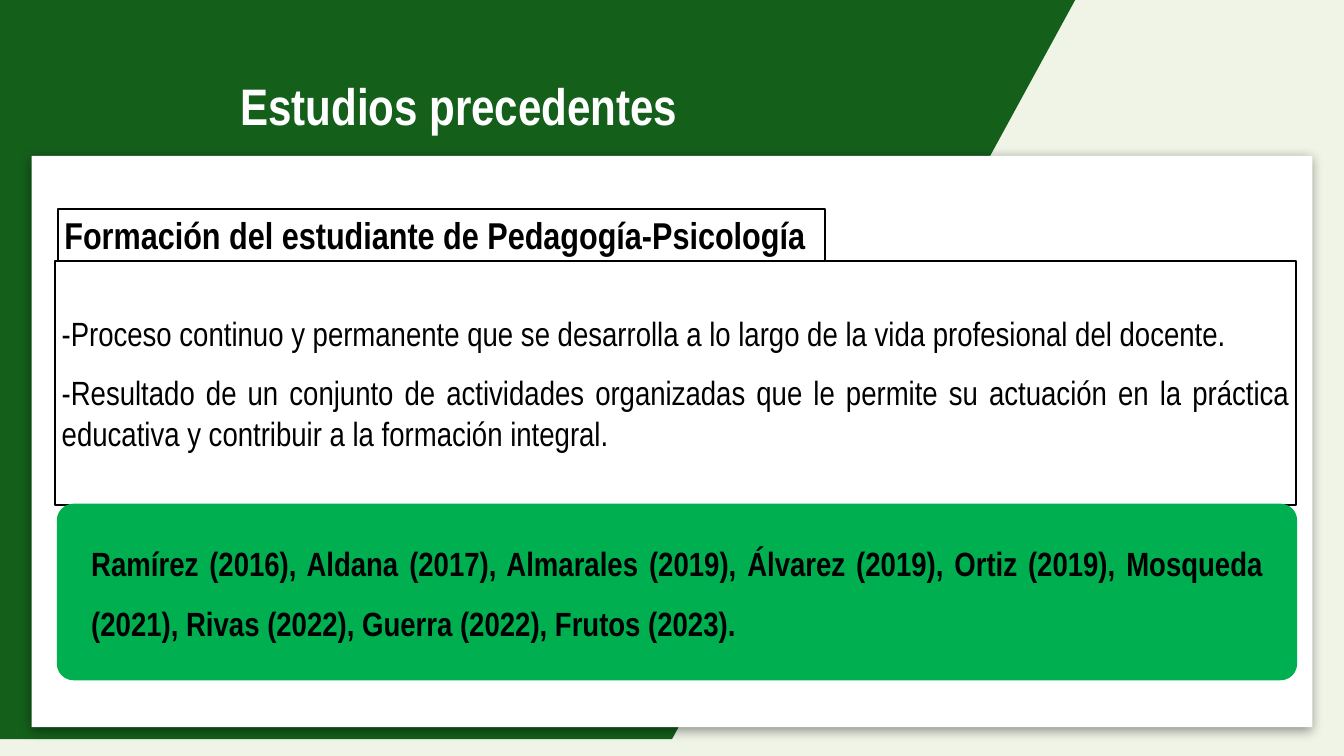
import pptx
import pptx.dml.color
import pptx.enum.shapes
import pptx.enum.text
import pptx.oxml
import pptx.oxml.ns
import pptx.util

RGBColor = pptx.dml.color.RGBColor
Inches = pptx.util.Inches
Pt = pptx.util.Pt
Shape = pptx.enum.shapes.MSO_SHAPE
Align = pptx.enum.text.PP_ALIGN
Anchor = pptx.enum.text.MSO_ANCHOR
AutoSize = pptx.enum.text.MSO_AUTO_SIZE

DARK_GREEN = RGBColor(0x14, 0x60, 0x1B)
GREEN = RGBColor(0x00, 0xB0, 0x50)
CREAM = RGBColor(0xF0, 0xF4, 0xE6)
WHITE = RGBColor(0xFF, 0xFF, 0xFF)
BLACK = RGBColor(0x00, 0x00, 0x00)

FONT = "Arial Narrow"
WIDTH, HEIGHT = 20, 11.25
LEFT, RIGHT = 0.86, 19.29
BODY_TOP, REFERENCES_TOP = 3.89, 7.51


def add_band(slide):
    """Dark green area with a slanted right edge."""
    corners = [(0, 0), (16.37, 0), (9.93, HEIGHT), (0, HEIGHT)]
    builder = slide.shapes.build_freeform(*corners[0], scale=Inches(1))
    builder.add_line_segments(corners[1:], close=True)
    band = builder.convert_to_shape()
    band.shadow.inherit = False
    band.fill.solid()
    band.fill.fore_color.rgb = DARK_GREEN
    band.line.fill.background()


def add_box(slide, box, fill, line=None, kind=Shape.RECTANGLE):
    shape = slide.shapes.add_shape(kind, *map(Inches, box))
    shape.shadow.inherit = False
    shape.fill.solid()
    shape.fill.fore_color.rgb = fill
    if line is None:
        shape.line.fill.background()
    else:
        shape.line.color.rgb = line
        shape.line.width = Pt(2)
    return shape


def add_soft_shadow(shape):
    effects = shape.element.spPr.find(pptx.oxml.ns.qn("a:effectLst"))
    effects.append(pptx.oxml.parse_xml(
        f'<a:outerShdw {pptx.oxml.ns.nsdecls("a")} blurRad="{Pt(12)}" dist="{Pt(3)}" '
        'dir="5400000" algn="t" rotWithShape="0">'
        '<a:srgbClr val="000000"><a:alpha val="40000"/></a:srgbClr></a:outerShdw>'))


def write(shape, texts, size, color=BLACK, bold=False, anchor=Anchor.TOP, **layout):
    frame = shape.text_frame
    frame.word_wrap = True
    frame.auto_size = AutoSize.NONE
    frame.vertical_anchor = anchor
    frame.text = "\n".join(texts)
    paragraph_format = {"alignment": Align.JUSTIFY, **layout}
    font_format = {"name": FONT, "size": Pt(size), "bold": bold}
    for paragraph in frame.paragraphs:
        for name, value in paragraph_format.items():
            setattr(paragraph, name, value)
        for run in paragraph.runs:
            for name, value in font_format.items():
                setattr(run.font, name, value)
            run.font.color.rgb = color


def add_title(slide, text):
    title = slide.shapes.title
    box = {"left": 0.28, "top": 0.98, "width": 13.1, "height": 1.1}
    for name, value in box.items():
        setattr(title, name, Inches(value))
    write(title, [text], 55, WHITE, True, Anchor.MIDDLE,
          alignment=Align.CENTER, line_spacing=1.07)
    # Bring the title in front of the green band
    slide.shapes.element.append(title.element)


def main():
    presentation = pptx.Presentation()
    presentation.slide_width = Inches(WIDTH)
    presentation.slide_height = Inches(HEIGHT)
    slide = presentation.slides.add_slide(presentation.slide_layouts[5])

    # Background, band and white card
    slide.background.fill.solid()
    slide.background.fill.fore_color.rgb = CREAM
    add_band(slide)
    card = add_box(slide, (0.47, 2.32, WIDTH - 2 * 0.47, 8.5), WHITE)
    add_soft_shadow(card)
    add_title(slide, "Estudios precedentes")

    # Heading and definitions
    heading = add_box(slide, (LEFT, 3.11, 11.42, BODY_TOP - 3.11), WHITE, BLACK)
    write(heading, ["Formación del estudiante de Pedagogía-Psicología"], 40, bold=True)
    body = add_box(slide, (0.82, BODY_TOP, RIGHT - 0.82, REFERENCES_TOP - BODY_TOP),
                   WHITE, BLACK)
    write(body, [
        "-Proceso continuo y permanente que se desarrolla a lo largo de la vida "
        "profesional del docente.",
        "-Resultado de un conjunto de actividades organizadas que le permite su "
        "actuación en la práctica educativa y contribuir a la formación integral.",
    ], 36, anchor=Anchor.MIDDLE)
    body.text_frame.paragraphs[1].space_before = Pt(20)

    # References
    panel = add_box(slide, (LEFT, REFERENCES_TOP, RIGHT - LEFT, 2.6), GREEN, GREEN,
                    Shape.ROUNDED_RECTANGLE)
    panel.adjustments[0] = 0.09
    references = slide.shapes.add_textbox(*map(Inches, (1.26, 7.73, 17.64, 2.39)))
    write(references, [
        "Ramírez (2016), Aldana (2017), Almarales (2019), Álvarez (2019), Ortiz (2019), "
        "Mosqueda (2021), Rivas (2022), Guerra (2022), Frutos (2023).",
    ], 36, bold=True, line_spacing=1.5, space_before=Pt(6), space_after=Pt(6))

    presentation.save("out.pptx")


if __name__ == "__main__":
    main()
